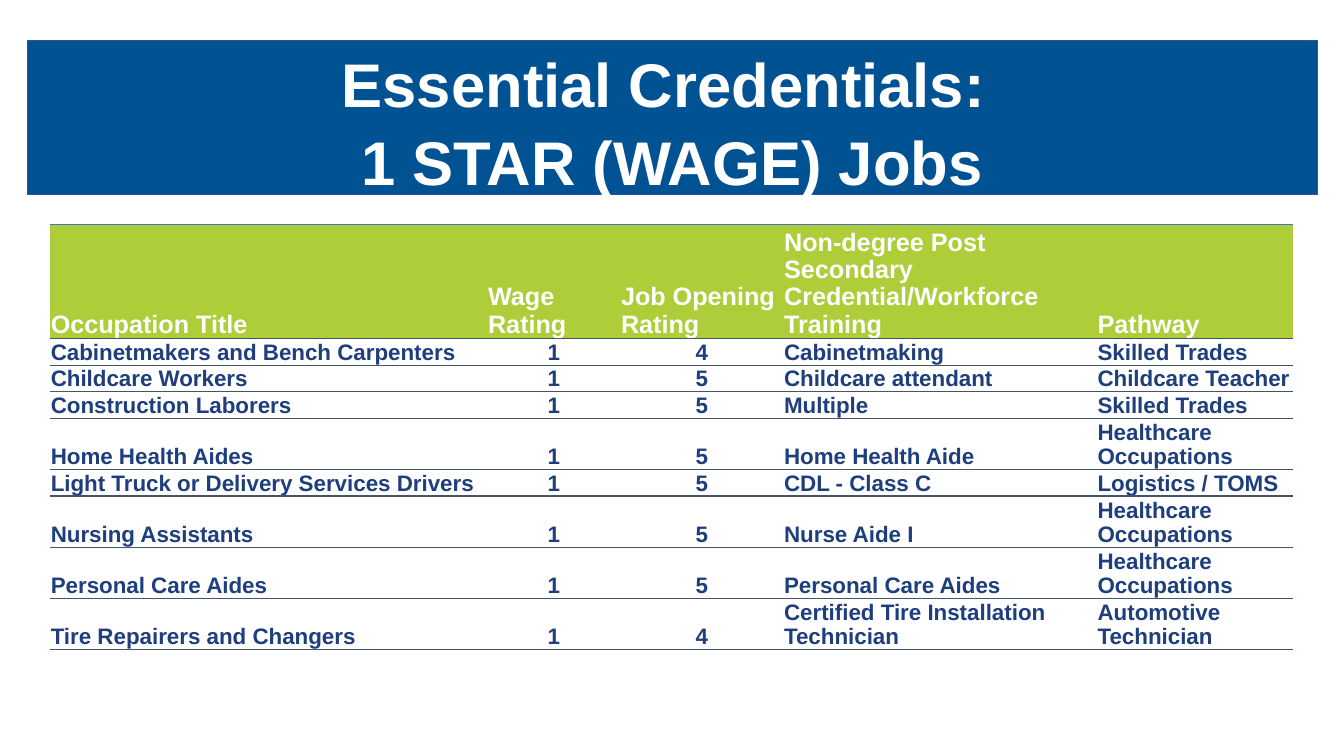
from dataclasses import dataclass

import pptx
import pptx.dml.color
import pptx.enum.shapes
import pptx.enum.text
import pptx.oxml
import pptx.oxml.ns
import pptx.util
from pptx.util import Cm

COLORS = {
    "banner": "005293",
    "banner_line": "325491",
    "header": "ADCD39",
    "header_line": "4472C4",
    "row_line": "44546A",
    "body_text": "1E3E7D",
    "white": "FFFFFF",
}
FONT = "Arial"
HEADERS = (
    "Occupation Title",
    "Wage Rating",
    "Job Opening Rating",
    "Non-degree Post Secondary Credential/Workforce Training",
    "Pathway",
)
COLUMN_WIDTHS = (11.02, 3.35, 4.11, 7.9, 4.95)
CENTERED_COLUMNS = (1, 2)
HEADER_HEIGHT = 2.87
ONE_LINE, TWO_LINES = 0.67, 1.29


@dataclass(frozen=True)
class Job:
    title: str
    wage: int
    openings: int
    training: str
    pathway: str
    height: float = ONE_LINE

    def texts(self) -> tuple[str, ...]:
        return (self.title, str(self.wage), str(self.openings), self.training, self.pathway)


JOBS = (
    Job("Cabinetmakers and Bench Carpenters", 1, 4, "Cabinetmaking", "Skilled Trades"),
    Job("Childcare Workers", 1, 5, "Childcare attendant", "Childcare Teacher"),
    Job("Construction Laborers", 1, 5, "Multiple", "Skilled Trades"),
    Job("Home Health Aides", 1, 5, "Home Health Aide", "Healthcare Occupations", TWO_LINES),
    Job("Light Truck or Delivery Services Drivers", 1, 5, "CDL - Class C", "Logistics / TOMS"),
    Job("Nursing Assistants", 1, 5, "Nurse Aide I", "Healthcare Occupations", TWO_LINES),
    Job("Personal Care Aides", 1, 5, "Personal Care Aides", "Healthcare Occupations", TWO_LINES),
    Job("Tire Repairers and Changers", 1, 4, "Certified Tire Installation Technician",
        "Automotive Technician", TWO_LINES),
)


def rgb(name: str) -> pptx.dml.color.RGBColor:
    return pptx.dml.color.RGBColor.from_string(COLORS[name])


def format_paragraph(para, size: int, color: str, centered: bool, spacing: float) -> None:
    align = pptx.enum.text.PP_ALIGN
    para.alignment = align.CENTER if centered else align.LEFT
    para.line_spacing = spacing
    for span in para.runs:
        span.font.name = FONT
        span.font.size = pptx.util.Pt(size)
        span.font.bold = True
        span.font.color.rgb = rgb(color)


def set_borders(cell, top: str, top_points: float) -> None:
    """Rule the cell above and below, and leave its sides open."""
    properties = cell._tc.get_or_add_tcPr()
    sides = (("lnL", None, 0), ("lnR", None, 0), ("lnT", top, top_points), ("lnB", "row_line", 1))
    for position, (tag, color, points) in enumerate(sides):
        paint = (f'<a:solidFill><a:srgbClr val="{COLORS[color]}"/></a:solidFill>'
                 if color else "<a:noFill/>")
        line = pptx.oxml.parse_xml(
            f'<a:{tag} {pptx.oxml.ns.nsdecls("a")} w="{pptx.util.Pt(points)}">{paint}</a:{tag}>')
        properties.insert(position, line)


def fill_cell(cell, text: str, is_header: bool, centered: bool) -> None:
    cell.text_frame.text = text
    cell.vertical_anchor = pptx.enum.text.MSO_ANCHOR.BOTTOM
    cell.margin_left = cell.margin_right = cell.margin_top = Cm(0.02)
    cell.margin_bottom = Cm(0)
    if is_header:
        cell.fill.solid()
        cell.fill.fore_color.rgb = rgb("header")
        set_borders(cell, "header_line", 0.5)
    else:
        cell.fill.background()
        set_borders(cell, "row_line", 1)
    format_paragraph(cell.text_frame.paragraphs[0], 18 if is_header else 16,
                     "white" if is_header else "body_text", centered, 0.96)


def add_banner(page) -> None:
    box = page.shapes.add_shape(pptx.enum.shapes.MSO_SHAPE.RECTANGLE,
                                Cm(0.69), Cm(1.02), Cm(32.51), Cm(3.89))
    box.shadow.inherit = False
    box.fill.solid()
    box.fill.fore_color.rgb = rgb("banner")
    box.line.color.rgb = rgb("banner_line")
    box.line.width = pptx.util.Pt(1)
    frame = box.text_frame
    frame.word_wrap = True
    frame.vertical_anchor = pptx.enum.text.MSO_ANCHOR.MIDDLE
    frame.margin_top = Cm(0.25)
    frame.text = "Essential Credentials: \n1 STAR (WAGE) Jobs"
    for para in frame.paragraphs:
        format_paragraph(para, 44, "white", True, 1.05)


def add_jobs_table(page) -> None:
    heights = (HEADER_HEIGHT, *(job.height for job in JOBS))
    table = page.shapes.add_table(len(heights), len(HEADERS), Cm(1.26), Cm(5.66),
                                  Cm(sum(COLUMN_WIDTHS)), Cm(sum(heights))).table
    table.horz_banding = False
    for column, width in zip(table.columns, COLUMN_WIDTHS):
        column.width = Cm(width)
    for row, height in zip(table.rows, heights):
        row.height = Cm(height)
    for row_index, texts in enumerate((HEADERS, *(job.texts() for job in JOBS))):
        is_header = row_index == 0
        for column_index, text in enumerate(texts):
            centered = not is_header and column_index in CENTERED_COLUMNS
            fill_cell(table.cell(row_index, column_index), text, is_header, centered)


def main() -> None:
    deck = pptx.Presentation()
    deck.slide_width, deck.slide_height = Cm(33.87), Cm(19.05)
    page = deck.slides.add_slide(deck.slide_layouts[6])
    add_banner(page)
    add_jobs_table(page)
    deck.save("out.pptx")


if __name__ == "__main__":
    main()
